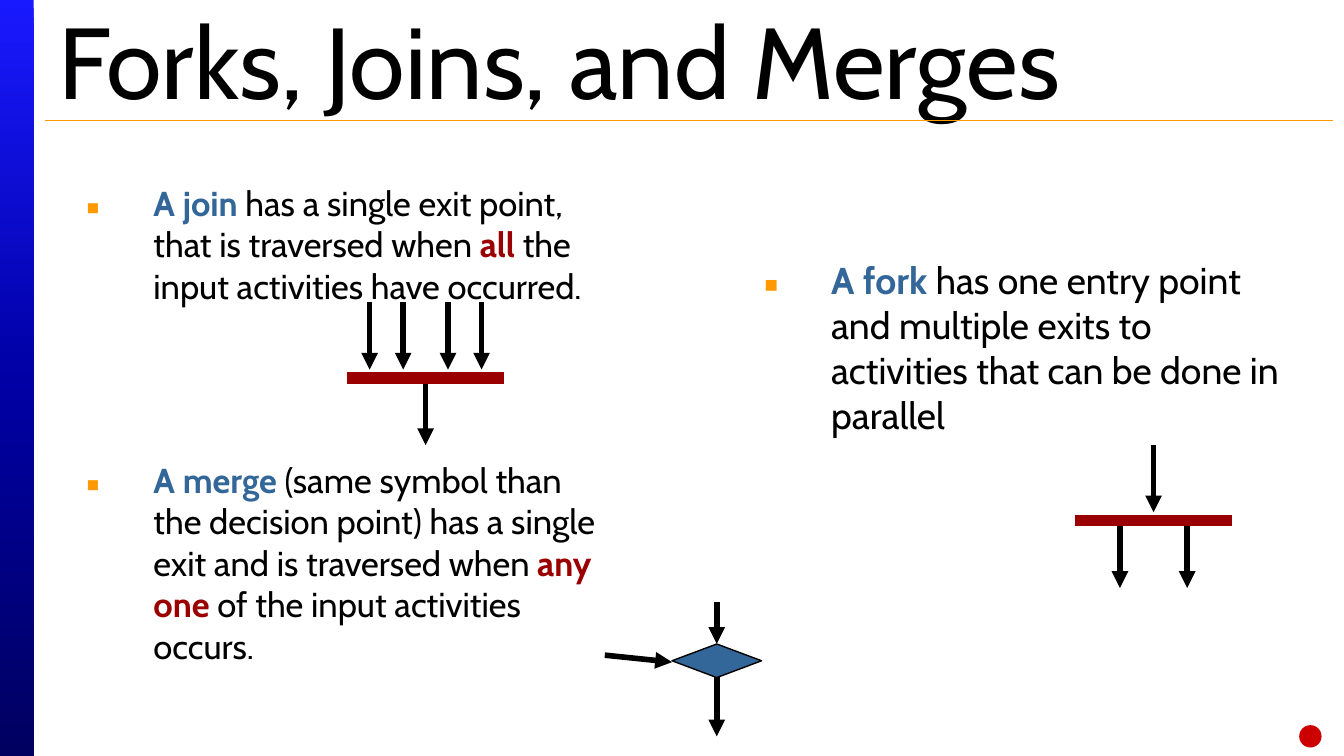
from copy import deepcopy
from typing import NamedTuple

from lxml.etree import SubElement
from pptx import Presentation
from pptx.dml.color import RGBColor
from pptx.enum.shapes import MSO_CONNECTOR, MSO_SHAPE
from pptx.enum.text import MSO_ANCHOR, MSO_AUTO_SIZE, PP_ALIGN
from pptx.oxml.ns import qn
from pptx.util import Emu, Pt

PX = 9525  # 96 px to the inch
FONT = "Cabin"
COLORS = {
    "black": "000000", "blue": "336699", "dark_red": "9A0000", "red": "CC0000",
    "orange": "FF9900", "top": "1919FF", "middle": "0000A5", "bottom": "000060",
}


class Box(NamedTuple):
    left: int
    top: int
    width: int
    height: int


class Line(NamedTuple):
    x1: int
    y1: int
    x2: int
    y2: int
    color: str = "black"
    weight: float = 3
    arrow: bool = True


class Span(NamedTuple):
    text: str
    color: str = "black"
    bold: bool = False


class Item(NamedTuple):
    spans: list[Span]
    space_before: float = 0


def px(value: int) -> Emu:
    return Emu(value * PX)


def rgb(name: str) -> RGBColor:
    return RGBColor.from_string(COLORS[name])


def place(shape, box: Box) -> None:
    shape.left, shape.top, shape.width, shape.height = map(px, box)


def add_span(para, span: Span, size: float) -> None:
    run = para.add_run()
    run.text = span.text
    run.font.name, run.font.size, run.font.bold = FONT, Pt(size), span.bold
    run.font.color.rgb = rgb(span.color)


def set_bullet(para) -> None:
    props = para._p.get_or_add_pPr()
    props.set("marL", str(px(48)))
    props.set("indent", str(px(-48)))
    color = SubElement(props, qn("a:buClr"))
    SubElement(color, qn("a:srgbClr"), val=COLORS["orange"])
    SubElement(props, qn("a:buFont"), typeface="Noto Sans Symbols")
    SubElement(props, qn("a:buChar"), char="▪")


def fill_list(holder, box: Box, items: list[Item], size: float, margin_top: int = 5) -> None:
    place(holder, box)
    frame = holder.text_frame
    frame.word_wrap = True
    frame.auto_size = MSO_AUTO_SIZE.NONE
    frame.vertical_anchor = MSO_ANCHOR.TOP
    frame.margin_top = px(margin_top)
    for index, item in enumerate(items):
        para = frame.paragraphs[0] if index == 0 else frame.add_paragraph()
        para.space_before = Pt(item.space_before)
        set_bullet(para)
        for span in item.spans:
            add_span(para, span, size)


def add_line(page, line: Line) -> None:
    connector = page.shapes.add_connector(
        MSO_CONNECTOR.STRAIGHT, px(line.x1), px(line.y1), px(line.x2), px(line.y2))
    connector.line.color.rgb = rgb(line.color)
    connector.line.width = Pt(line.weight)
    if line.arrow:
        SubElement(connector.line._get_or_add_ln(), qn("a:tailEnd"), type="triangle")
    SubElement(connector._element.spPr, qn("a:effectLst"))


def add_shape(page, kind: MSO_SHAPE, box: Box, color: str, outline: str | None = None):
    shape = page.shapes.add_shape(kind, *map(px, box))
    shape.shadow.inherit = False
    shape.fill.solid()
    shape.fill.fore_color.rgb = rgb(color)
    if outline:
        shape.line.color.rgb = rgb(outline)
        shape.line.width = Pt(0.75)
    else:
        shape.line.fill.background()
    return shape


def add_sidebar(page) -> None:
    fill = add_shape(page, MSO_SHAPE.RECTANGLE, Box(0, 0, 24, 540), "middle").fill
    fill.gradient()
    fill.gradient_angle = 270
    stop_list = fill._xPr.find(".//" + qn("a:gsLst"))
    stop_list.append(deepcopy(stop_list[-1]))
    for index, name in enumerate(("top", "middle", "bottom")):
        stop = fill.gradient_stops[index]
        stop.position = index / 2
        stop.color.rgb = rgb(name)


def main() -> None:
    deck = Presentation()
    deck.slide_width, deck.slide_height = px(960), px(540)
    page = deck.slides.add_slide(deck.slide_layouts[3])
    title, left_list, right_list = page.placeholders

    # Side band and title rule
    add_sidebar(page)
    add_line(page, Line(32, 86, 952, 86, "orange", 0.75, False))

    # Title
    place(title, Box(32, 6, 920, 72))
    title.text_frame.auto_size = MSO_AUTO_SIZE.NONE
    title.text_frame.vertical_anchor = MSO_ANCHOR.MIDDLE
    title.text_frame.paragraphs[0].alignment = PP_ALIGN.LEFT
    add_span(title.text_frame.paragraphs[0], Span("Forks, Joins, and Merges"), 54)

    # Definitions
    join = Item([
        Span("A join", "blue", True),
        Span(" has a single exit point, that is traversed when "),
        Span("all ", "dark_red", True),
        Span("the input activities have occurred."),
    ])
    merge = Item([
        Span("A merge", "blue", True),
        Span(" (same symbol than the decision point) has a single exit "
             "and is traversed when "),
        Span("any one", "dark_red", True),
        Span(" of the input activities occurs."),
    ], space_before=81.7)
    fork = Item([
        Span("A fork", "blue", True),
        Span(" has one entry point and multiple exits to activities "
             "that can be done in parallel"),
    ])
    fill_list(left_list, Box(52, 125, 392, 346), [join, merge], 18.5)
    fill_list(right_list, Box(536, 66, 392, 346), [fork], 20, margin_top=118)

    # Fork, join and merge arrows
    arrows = [Line(824, 318, 824, 366)]
    arrows += [Line(x, 372, x, 420) for x in (800, 848)]
    arrows += [Line(x, 216, x, 264) for x in (264, 288, 320, 344)]
    arrows += [Line(304, 270, 304, 318), Line(512, 430, 512, 460),
               Line(512, 478, 512, 526), Line(432, 468, 480, 473)]
    for arrow in arrows:
        add_line(page, arrow)

    # Synchronisation bars
    for left, y in ((768, 372), (248, 270)):
        add_line(page, Line(left, y, left + 112, y, "dark_red", 6, False))

    # Merge diamond and corner dot
    add_shape(page, MSO_SHAPE.DIAMOND, Box(480, 460, 64, 24), "blue", "black")
    add_shape(page, MSO_SHAPE.OVAL, Box(928, 518, 16, 16), "red")

    deck.save("out.pptx")


if __name__ == "__main__":
    main()
